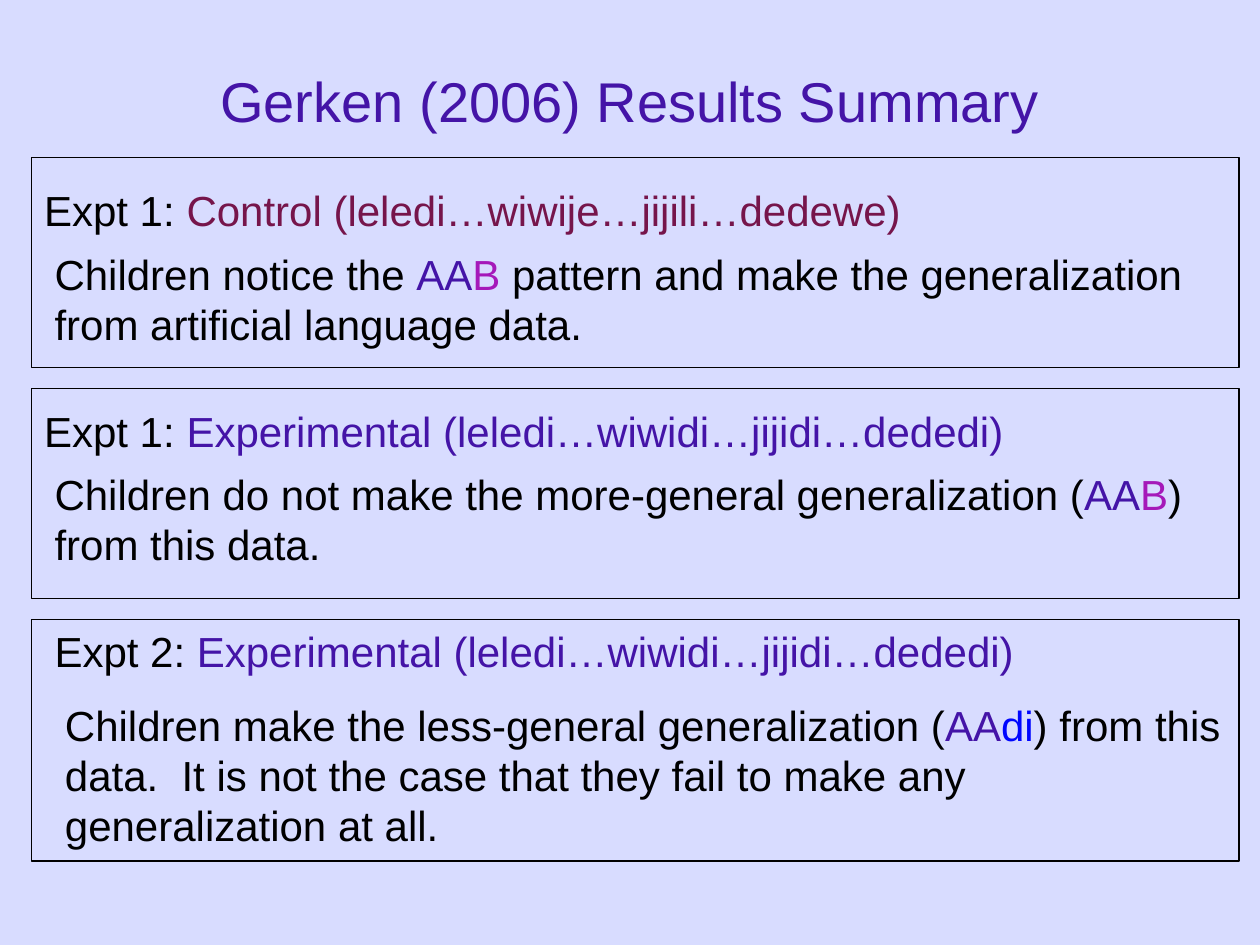
import pptx
import pptx.dml.color
import pptx.enum.shapes
import pptx.enum.text
import pptx.util
from dataclasses import dataclass

Cm = pptx.util.Cm


@dataclass(frozen=True)
class Theme:
    font: str = "Arial"
    head: int = 32
    body: int = 24
    back: str = "D8DCFF"
    ink: str = "000000"
    violet: str = "4414A7"
    wine: str = "76154B"
    pink: str = "A519B9"
    blue: str = "0006FF"


THEME = Theme()
LEFT, WIDE, TEXT_WIDE = 0.64, 24.34, 23.92
STEP = 0.21  # indent of the finding under its heading

AAB = [("AA", THEME.violet), ("B", THEME.pink)]
AADI = [("AA", THEME.violet), ("di", THEME.blue)]
SAME = "Experimental (leledi…wiwidi…jijidi…dededi)"

# Box top and height, heading left and top, finding top and height, then text
PANELS = [
    (3.18, 4.23, LEFT, 3.6, 4.88, 2.29,
     [("Expt 1: ", THEME.ink),
      ("Control (leledi…wiwije…jijili…dedewe)", THEME.wine)],
     [("Children notice the ", THEME.ink), *AAB,
      (" pattern and make the generalization from artificial language data.",
       THEME.ink)]),
    (7.83, 4.23, LEFT, 8.05, 9.32, 2.29,
     [("Expt 1: ", THEME.ink), (SAME, THEME.violet)],
     [("Children do not make the more-general generalization (", THEME.ink),
      *AAB, (") from this data.", THEME.ink)]),
    (12.49, 4.87, LEFT + STEP, 12.49, 13.97, 3.3,
     [("Expt 2: ", THEME.ink), (SAME, THEME.violet)],
     [("Children make the less-general generalization (", THEME.ink), *AADI,
      (") from this data.  It is not the case that they fail to make any "
       "generalization at all.", THEME.ink)]),
]


def tint(code):
    return pptx.dml.color.RGBColor.from_string(code)


def add_runs(para, runs, size):
    for words, code in runs:
        run = para.add_run()
        run.text = words
        run.font.name = THEME.font
        run.font.size = pptx.util.Pt(size)
        run.font.color.rgb = tint(code)


def set_title(slide, words):
    title = slide.shapes.title
    title.left, title.top = Cm(0), Cm(0.43)
    title.width, title.height = Cm(25.4), Cm(3.18)
    frame = title.text_frame
    frame.vertical_anchor = pptx.enum.text.MSO_ANCHOR.MIDDLE
    para = frame.paragraphs[0]
    para.alignment = pptx.enum.text.PP_ALIGN.CENTER
    add_runs(para, [(words, THEME.violet)], THEME.head)


def add_text(slide, left, top, high, runs):
    box = slide.shapes.add_textbox(Cm(left), Cm(top), Cm(TEXT_WIDE), Cm(high))
    box.text_frame.word_wrap = True
    add_runs(box.text_frame.paragraphs[0], runs, THEME.body)


def add_frame(slide, top, high):
    kind = pptx.enum.shapes.MSO_SHAPE.RECTANGLE
    rect = slide.shapes.add_shape(kind, Cm(LEFT), Cm(top), Cm(WIDE), Cm(high))
    rect.shadow.inherit = False
    rect.fill.background()
    rect.line.color.rgb = tint(THEME.ink)
    rect.line.width = pptx.util.Pt(0.75)


def main():
    deck = pptx.Presentation()
    deck.slide_width, deck.slide_height = Cm(25.4), Cm(19.05)
    slide = deck.slides.add_slide(deck.slide_layouts[5])
    slide.background.fill.solid()
    slide.background.fill.fore_color.rgb = tint(THEME.back)

    # Title
    set_title(slide, "Gerken (2006) Results Summary")

    # One framed panel per experiment: heading, then finding
    for top, high, left, head_top, body_top, body_high, head, body in PANELS:
        add_text(slide, left, head_top, 1.27, head)
        add_text(slide, left + STEP, body_top, body_high, body)
        add_frame(slide, top, high)

    deck.save("out.pptx")


if __name__ == "__main__":
    main()
